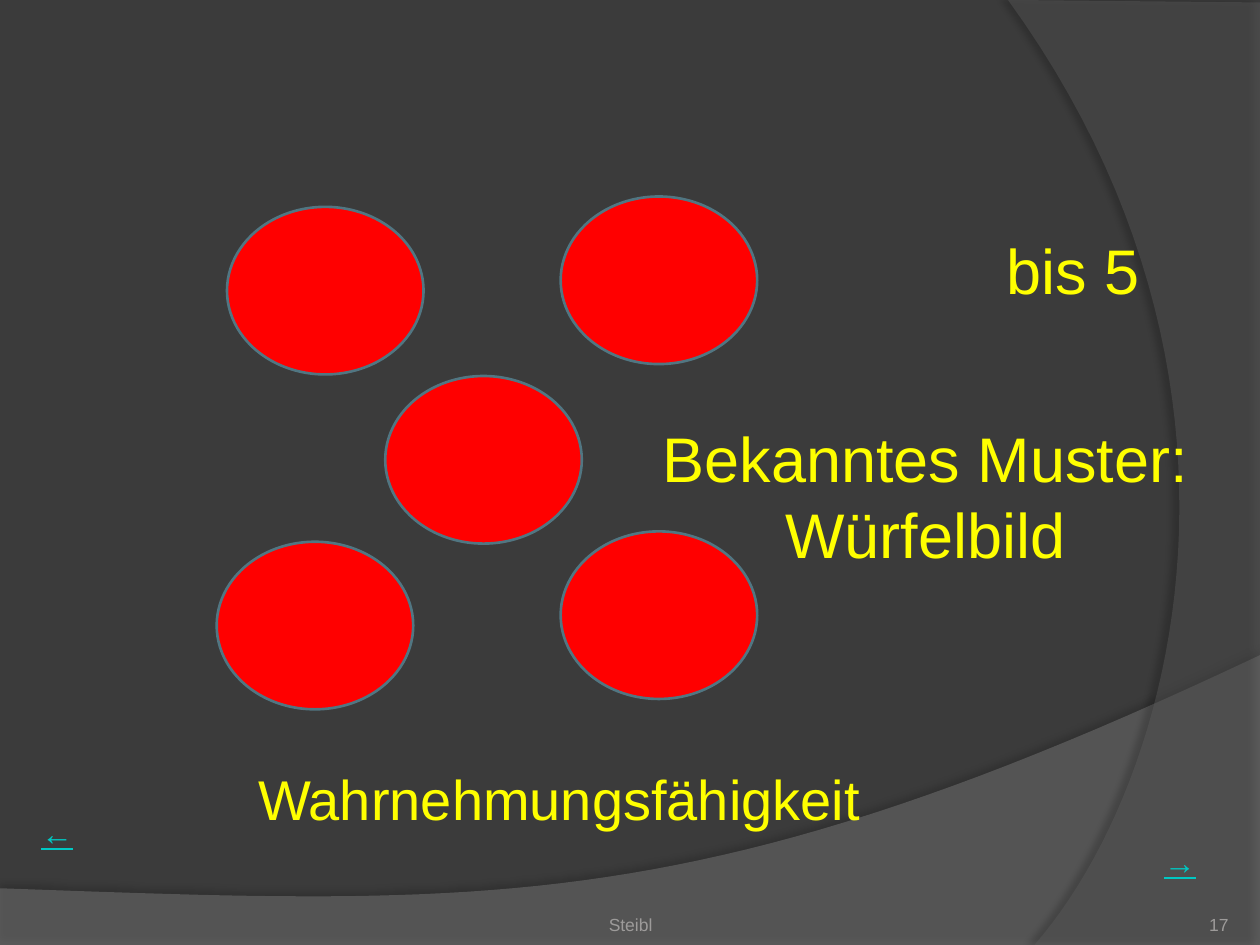
from lxml.etree import SubElement
from pptx import Presentation
from pptx.dml.color import RGBColor
from pptx.enum.shapes import MSO_SHAPE
from pptx.enum.text import MSO_ANCHOR, PP_ALIGN
from pptx.oxml.ns import qn
from pptx.util import Inches, Pt

COLUMNS, ROWS = 100, 75
CELL = Inches(0.1)


def grid(*cells):
    return [round(cell * CELL) for cell in cells]


def color(value):
    return RGBColor.from_string(value)


def curve(start, first, second, end, steps=48):
    points = []
    for step in range(1, steps + 1):
        t = step / steps
        weights = ((1 - t) ** 3, 3 * t * (1 - t) ** 2, 3 * t * t * (1 - t), t ** 3)
        corners = (start, first, second, end)
        points.append(tuple(sum(w * corner[axis] for w, corner in zip(weights, corners))
                            for axis in (0, 1)))
    return points


def add_color(parent, value, opacity):
    tint = SubElement(parent, qn("a:srgbClr"), val=value)
    SubElement(tint, qn("a:alpha"), val=str(opacity * 1000))


def add_wave(page, points, fill, opacity, shade, blur, distance, direction):
    builder = page.shapes.build_freeform(*grid(*points[0]), scale=1.0)
    builder.add_line_segments([grid(*point) for point in points[1:]], close=True)
    wave = builder.convert_to_shape()
    wave.shadow.inherit = False
    wave.line.fill.background()
    wave.fill.solid()
    wave.fill.fore_color.rgb = color(fill)
    properties = wave.element.spPr
    solid = properties.find(qn("a:solidFill"))
    solid.remove(solid[0])
    add_color(solid, fill, opacity)
    shadow = SubElement(properties.find(qn("a:effectLst")), qn("a:outerShdw"),
                        blurRad=str(Pt(blur)), dist=str(Pt(distance)),
                        dir=str(direction * 60000), algn="ctr", rotWithShape="0")
    add_color(shadow, "000000", shade)


def add_background(page, width, height):
    page.background.fill.solid()
    page.background.fill.fore_color.rgb = color("3B3B3B")
    right, left = (width, 52), (0, 70.5)
    hill = [left, (0, height), (width, height), right]
    hill += curve(right, (55.9, 72.9), (39.1, 71.9), left)
    add_wave(page, hill, "7F7F7F", 45, 35, 4, 3.5, 270)
    bottom, top = (82.1, height), (80, 0)
    arc = [(width, 0.2), (width, height), bottom]
    arc += curve(bottom, (93.5, 61.9), (101.8, 30), top)
    add_wave(page, arc, "5E5E5E", 40, 45, 4, 4, 180)


def add_text(page, box, text, size, value, align=PP_ALIGN.LEFT,
             anchor=MSO_ANCHOR.TOP, margins=(1, 0.5, 1, 0.5), underline=None):
    frame = page.shapes.add_textbox(*grid(*box)).text_frame
    frame.word_wrap = True
    frame.vertical_anchor = anchor
    (frame.margin_left, frame.margin_top,
     frame.margin_right, frame.margin_bottom) = grid(*margins)
    para = frame.paragraphs[0]
    para.alignment = align
    span = para.add_run()
    span.text = text
    span.font.name = "Arial"
    span.font.size = Pt(size)
    span.font.color.rgb = color(value)
    span.font.underline = underline


def add_dice(page, box):
    left, top, width, height = box
    dot_width, dot_height = 15.6, 13.3
    across, down = width - dot_width, height - dot_height
    places = [(0.03, 0.03), (0.49, 0.52), (1, 0.97), (1, 0), (0, 1)]
    dice = page.shapes.add_group_shape()
    for x, y in places:
        dot = dice.shapes.add_shape(MSO_SHAPE.OVAL, *grid(
            left + x * across, top + y * down, dot_width, dot_height))
        dot.shadow.inherit = False
        dot.fill.solid()
        dot.fill.fore_color.rgb = color("FF0000")
        dot.line.color.rgb = color("517682")
        dot.line.width = Pt(1.5)


def add_captions(page):
    yellow = "FFFF00"
    add_text(page, (78.9, 17.9, 18, 7.1), "bis 5", 36, yellow)
    add_text(page, (46.9, 32.8, 53.1, 13.1), "Bekanntes Muster: Würfelbild",
             36, yellow, PP_ALIGN.CENTER)
    add_text(page, (19.5, 60.2, 73.4, 6.4), "Wahrnehmungsfähigkeit", 32, yellow)


def add_navigation(page):
    add_text(page, (2.3, 64.1, 7.8, 4), "←", 18, "00C8C3", underline=True)
    add_text(page, (91.4, 66.4, 6.3, 4), "→", 18, "00C8C3", underline=True)


def add_footer(page, top, height):
    gray = "9D9B9A"
    add_text(page, (34.2, top, 31.7, height), "Steibl", 10, gray,
             PP_ALIGN.CENTER, MSO_ANCHOR.BOTTOM, (0, 0.5, 0, 0))
    add_text(page, (89.2, top, 8.3, height), "17", 10, gray,
             PP_ALIGN.RIGHT, MSO_ANCHOR.BOTTOM, (0, 0, 0, 0))


def main():
    deck = Presentation()
    deck.slide_width, deck.slide_height = grid(COLUMNS, ROWS)
    page = deck.slides.add_slide(deck.slide_layouts[6])
    add_background(page, COLUMNS, ROWS)
    add_navigation(page)
    add_dice(page, (17.2, 15.6, 42.9, 40.7))
    add_captions(page)
    add_footer(page, 70.2, 4)
    deck.save("out.pptx")


if __name__ == "__main__":
    main()
